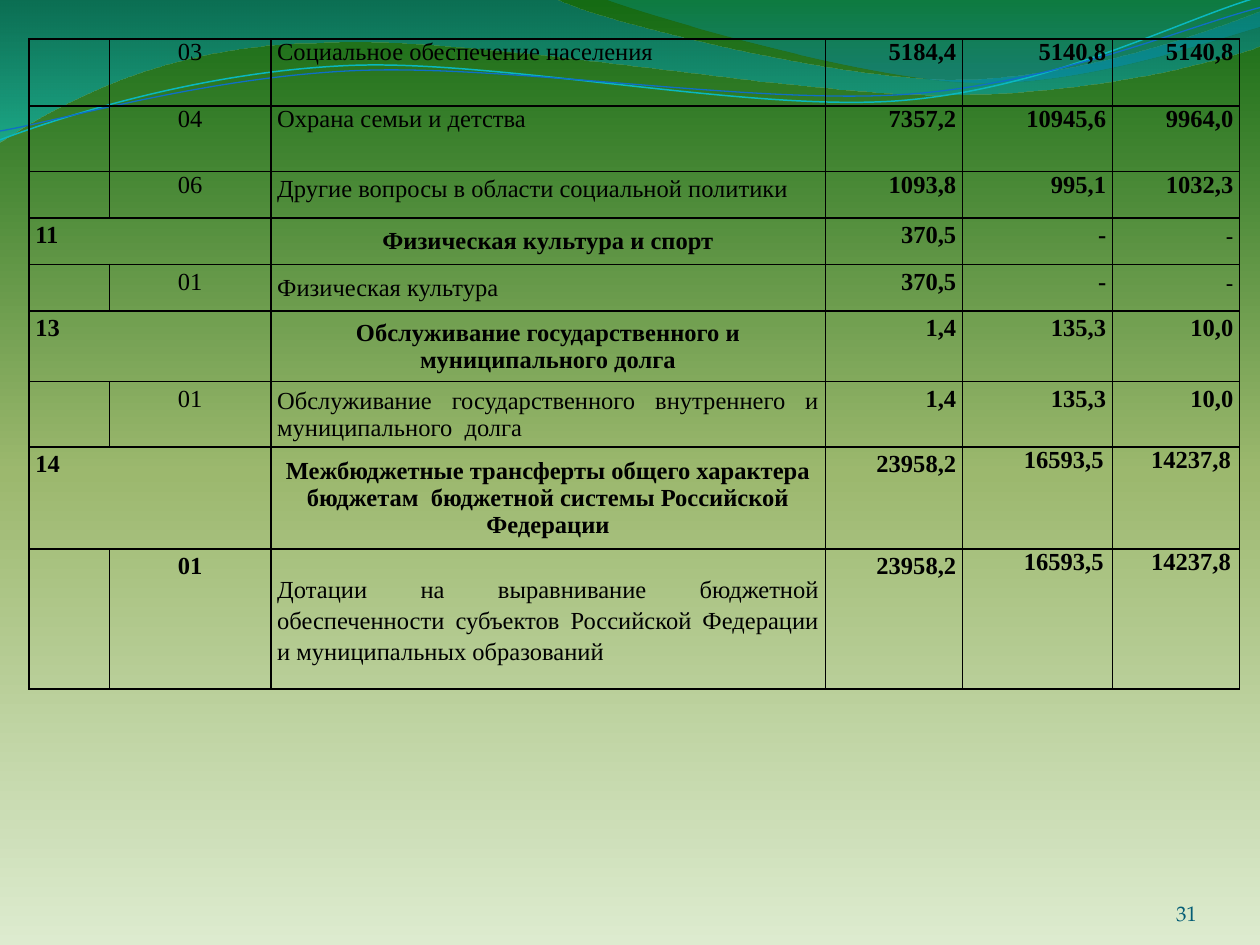
from dataclasses import dataclass, replace
from math import cos, radians, sin

from lxml.etree import SubElement
from pptx import Presentation
from pptx.dml.color import RGBColor
from pptx.enum.text import MSO_ANCHOR as Anchor, PP_ALIGN as Align
from pptx.oxml.ns import qn
from pptx.util import Inches, Pt


@dataclass(frozen=True)
class Theme:
    text: str = "000000"
    number: str = "045D75"
    body_font: str = "Times New Roman"
    dash_font: str = "Calibri"
    number_font: str = "TeX Gyre Pagella"
    body_size: int = 14
    number_size: int = 12
    border: str = "000000"
    border_width: float = 1
    background: tuple = ((0, "DDEBCF", 100), (50, "9CB86E", 100), (100, "156B13", 100))
    wide_wave: tuple = ((0, "0074A1", 45), (100, "00C6CF", 55))
    right_wave: tuple = ((0, "00A1A9", 30), (80, "008BBF", 45))
    light_line: str = "0AB8BF"
    dark_line: str = "0F6FC6"


@dataclass(frozen=True)
class CellStyle:
    align: Align = Align.LEFT
    bold: bool = False
    spaced: bool = False
    anchor: Anchor = Anchor.TOP
    margin: float = 0.05
    font: str = Theme.body_font


THEME = Theme()

CODE = CellStyle(Align.CENTER)
SPACED_CODE = replace(CODE, spaced=True)
SECTION = CellStyle(bold=True, spaced=True)
HEADING = CellStyle(Align.CENTER, bold=True, anchor=Anchor.MIDDLE)
NAME = CellStyle(Align.JUSTIFY)
MIDDLE_NAME = replace(NAME, anchor=Anchor.MIDDLE)
VALUE = CellStyle(Align.RIGHT, bold=True)
SPACED_VALUE = replace(VALUE, spaced=True)
INSET_VALUE = replace(VALUE, margin=0.07)
DASH = replace(SPACED_VALUE, bold=False, font=THEME.dash_font)

TOP_VALUES = [VALUE] * 3
SPACED_VALUES = [SPACED_VALUE] * 3
DASH_VALUES = [SPACED_VALUE, SPACED_VALUE, DASH]
TRANSFER_VALUES = [SPACED_VALUE, INSET_VALUE, INSET_VALUE]

COLUMN_WIDTHS = [0.64, 1.28, 4.4, 1.09, 1.19, 1.01]
BUDGET_ROWS = [
    (0.53, ["", "03", "Социальное обеспечение населения", "5184,4", "5140,8", "5140,8"],
     [CODE, CODE, NAME, *TOP_VALUES]),
    (0.52, ["", "04", "Охрана семьи и детства", "7357,2", "10945,6", "9964,0"],
     [CODE, CODE, NAME, *TOP_VALUES]),
    (0.37, ["", "06", "Другие вопросы в области социальной политики", "1093,8", "995,1", "1032,3"],
     [CODE, CODE, replace(NAME, spaced=True), *TOP_VALUES]),
    (0.37, ["11", "", "Физическая культура и спорт", "370,5", "-", "-"],
     [SECTION, CODE, HEADING, *DASH_VALUES]),
    (0.37, ["", "01", "Физическая культура", "370,5", "-", "-"],
     [CODE, SPACED_CODE, MIDDLE_NAME, *DASH_VALUES]),
    (0.56, ["13", "", "Обслуживание государственного и муниципального долга", "1,4", "135,3", "10,0"],
     [SECTION, CODE, HEADING, *SPACED_VALUES]),
    (0.52, ["", "01", "Обслуживание государственного внутреннего и муниципального  долга",
            "1,4", "135,3", "10,0"],
     [CODE, SPACED_CODE, MIDDLE_NAME, *SPACED_VALUES]),
    (0.81, ["14", "", "Межбюджетные трансферты общего характера бюджетам  бюджетной системы "
            "Российской Федерации", "23958,2", "16593,5", "14237,8"],
     [SECTION, CODE, HEADING, *TRANSFER_VALUES]),
    (1.11, ["", "01", "Дотации на выравнивание бюджетной обеспеченности субъектов "
            "Российской Федерации и муниципальных образований", "23958,2", "16593,5", "14237,8"],
     [CODE, replace(SPACED_CODE, bold=True), replace(MIDDLE_NAME, spaced=True), *TRANSFER_VALUES]),
]

WIDE_WAVE = [
    [(0, -0.01)], [(4.4, -0.01)], [(4.76, 0.17), (6.64, 0.63), (7.58, 0.63)],
    [(8.53, 0.63), (9.58, 0.26), (10, 0.09)], [(10.01, 0.36)],
    [(9.83, 0.44), (8.7, 0.76), (7.46, 0.75)], [(6.22, 0.75), (3.82, 0.28), (2.57, 0.34)],
    [(1.29, 0.35), (0.46, 0.83), (-0.01, 1.13)], [(0, -0.01)],
]
RIGHT_WAVE = [
    [(4.79, -0.01)], [(5.09, 0.11), (6.82, 0.62), (7.69, 0.65)],
    [(8.56, 0.69), (9.61, 0.32), (10, 0.21)], [(10, 0)], [(4.79, -0.01)],
]
LIGHT_LINE = [
    [(0, 1.11)], [(0.48, 0.93), (1.58, 0.57), (2.77, 0.52)],
    [(3.95, 0.47), (5.93, 0.89), (7.13, 0.8)], [(8.33, 0.71), (9.38, 0.15), (9.98, -0.02)],
]
DARK_LINE = [
    [(0, 1.04)], [(0.47, 0.96), (1.64, 0.61), (2.83, 0.56)],
    [(4.03, 0.51), (5.97, 0.83), (7.17, 0.75)], [(8.36, 0.67), (9.41, 0.21), (10, 0.06)],
]
LINE_CENTER = (4.99, 0.58)
LINE_TILT = 2.7


def set_gradient(fill, properties, stops, angle):
    fill.solid()
    solid = properties.find(qn("a:solidFill"))
    gradient = SubElement(properties, qn("a:gradFill"), rotWithShape="1")
    stop_list = SubElement(gradient, qn("a:gsLst"))
    for position, color, alpha in stops:
        stop = SubElement(stop_list, qn("a:gs"), pos=str(position * 1000))
        color_element = SubElement(stop, qn("a:srgbClr"), val=color)
        if alpha < 100:
            SubElement(color_element, qn("a:alpha"), val=str(alpha * 1000))
    SubElement(gradient, qn("a:lin"), ang=str(angle * 60000), scaled="0")
    properties.replace(solid, gradient)


def add_curve(slide, segments, closed):
    ends = [(Inches(x), Inches(y)) for x, y in (segment[-1] for segment in segments)]
    builder = slide.shapes.build_freeform(*ends[0], scale=1.0)
    builder.add_line_segments(ends[1:], close=closed)
    shape = builder.convert_to_shape()
    shape.shadow.inherit = False
    straight_parts = list(shape.element.iter(qn("a:lnTo")))
    for part, segment in zip(straight_parts, segments[1:]):
        if len(segment) == 3:
            part.tag = qn("a:cubicBezTo")
            part.remove(part[0])
            for x, y in segment:
                SubElement(part, qn("a:pt"), x=str(Inches(x) - shape.left),
                           y=str(Inches(y) - shape.top))
    return shape


def add_wave(slide, segments, stops):
    shape = add_curve(slide, segments, closed=True)
    set_gradient(shape.fill, shape.element.spPr, stops, 90)
    shape.line.fill.background()


def turn(point, center, degrees):
    x, y = point[0] - center[0], point[1] - center[1]
    cosine, sine = cos(radians(degrees)), sin(radians(degrees))
    return center[0] + x * cosine - y * sine, center[1] + x * sine + y * cosine


def add_wave_line(slide, segments, color, width):
    level = [[turn(point, LINE_CENTER, LINE_TILT) for point in segment] for segment in segments]
    shape = add_curve(slide, level, closed=False)
    shape.rotation = -LINE_TILT
    shape.fill.background()
    shape.line.color.rgb = RGBColor.from_string(color)
    shape.line.width = Pt(width)


def add_run(paragraph, text, font, size, color, bold=False):
    run = paragraph.add_run()
    run.text = text
    run.font.name = font
    run.font.size = Pt(size)
    run.font.bold = bold
    run.font.color.rgb = RGBColor.from_string(color)


def fill_cell(cell, text, style):
    properties = cell._tc.get_or_add_tcPr()
    for side in ("lnL", "lnR", "lnT", "lnB"):
        line = SubElement(properties, qn(f"a:{side}"), w=str(Pt(THEME.border_width)))
        SubElement(SubElement(line, qn("a:solidFill")), qn("a:srgbClr"), val=THEME.border)
    cell.fill.background()
    cell.margin_left = cell.margin_right = Inches(style.margin)
    cell.margin_top = cell.margin_bottom = 0
    cell.vertical_anchor = style.anchor
    if not text:
        return
    paragraph = cell.text_frame.paragraphs[0]
    paragraph.alignment = style.align
    if style.spaced:
        paragraph.line_spacing = 1.15
        paragraph.space_after = Pt(10)
    add_run(paragraph, text, style.font, THEME.body_size, THEME.text, style.bold)


def add_budget_table(slide):
    heights = [height for height, _, _ in BUDGET_ROWS]
    table = slide.shapes.add_table(
        len(heights), len(COLUMN_WIDTHS), Inches(0.23), Inches(0.31),
        Inches(sum(COLUMN_WIDTHS)), Inches(sum(heights))).table
    table.first_row = table.horz_banding = False
    for column, width in zip(table.columns, COLUMN_WIDTHS):
        column.width = Inches(width)
    for index, (height, texts, styles) in enumerate(BUDGET_ROWS):
        row = table.rows[index]
        row.height = Inches(height)
        for cell, text, style in zip(row.cells, texts, styles):
            fill_cell(cell, text, style)
        if texts[0]:
            table.cell(index, 0).merge(table.cell(index, 1))


def add_page_number(slide, number):
    box = slide.shapes.add_textbox(Inches(8.67), Inches(6.95), Inches(0.83), Inches(0.4))
    frame = box.text_frame
    frame.word_wrap = True
    frame.vertical_anchor = Anchor.BOTTOM
    frame.margin_left = frame.margin_right = frame.margin_top = frame.margin_bottom = 0
    paragraph = frame.paragraphs[0]
    paragraph.alignment = Align.RIGHT
    add_run(paragraph, number, THEME.number_font, THEME.number_size, THEME.number)


def main():
    presentation = Presentation()
    presentation.slide_width, presentation.slide_height = Inches(10), Inches(7.5)
    slide = presentation.slides.add_slide(presentation.slide_layouts[6])
    background = slide.background.fill
    background.solid()
    set_gradient(background, slide.element.find(".//" + qn("p:bgPr")), THEME.background, 270)
    add_wave(slide, WIDE_WAVE, THEME.wide_wave)
    add_wave(slide, RIGHT_WAVE, THEME.right_wave)
    add_wave_line(slide, LIGHT_LINE, THEME.light_line, 0.85)
    add_wave_line(slide, DARK_LINE, THEME.dark_line, 0.75)
    add_page_number(slide, "31")
    add_budget_table(slide)
    presentation.save("out.pptx")


if __name__ == "__main__":
    main()
